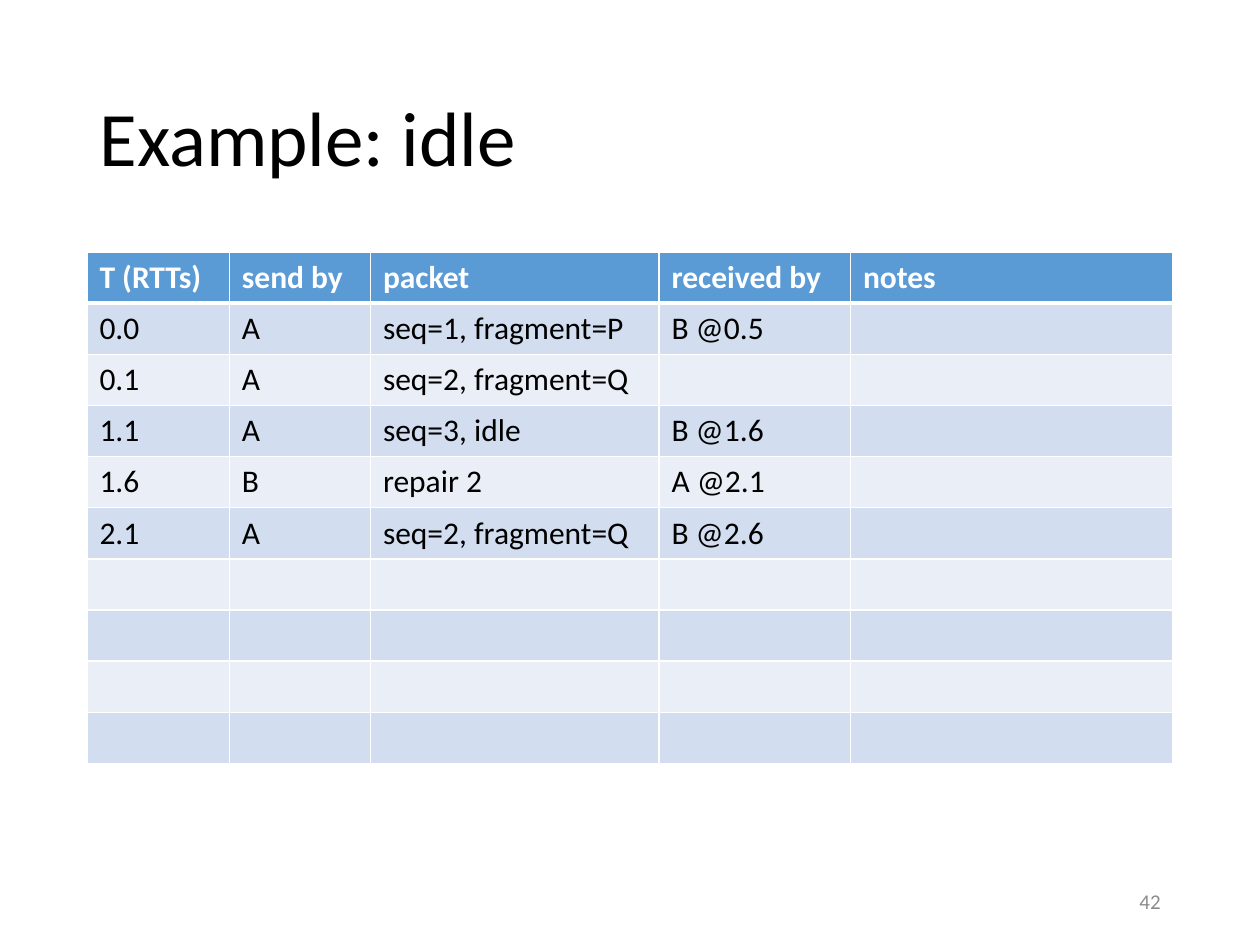
from lxml import etree
from pptx import Presentation
from pptx import util as u
from pptx.dml.color import RGBColor
from pptx.enum import text
from pptx.oxml.ns import qn

FONT = "Calibri"
LEFT, WIDTH = 0.69, 8.62
HEADER_FILL = "5B9BD5"
BAND_FILLS = ("D2DEEF", "EAEFF7")
COLUMN_WIDTHS = (1.13, 1.12, 2.29, 1.52, 2.56)
HEADINGS = ("T (RTTs)", "send by", "packet", "received by", "notes")
EVENTS = (
    ("0.0", "A", "seq=1, fragment=P", "B @0.5"),
    ("0.1", "A", "seq=2, fragment=Q", ""),
    ("1.1", "A", "seq=3, idle", "B @1.6"),
    ("1.6", "B", "repair 2", "A @2.1"),
    ("2.1", "A", "seq=2, fragment=Q", "B @2.6"),
)
ROW_COUNT = 10


def color(value):
    return RGBColor.from_string(value)


def write_text(frame, content, size=18, ink="000000", bold=False,
               align=text.PP_ALIGN.LEFT, anchor=None, spacing=None):
    frame.word_wrap = True
    if anchor is not None:
        frame.vertical_anchor = anchor
    paragraph = frame.paragraphs[0]
    paragraph.alignment = align
    if spacing:
        paragraph.line_spacing = spacing
    run = paragraph.add_run()
    run.text = content
    run.font.name = FONT
    run.font.size = u.Pt(size)
    run.font.bold = bold
    run.font.color.rgb = color(ink)


def place(shape, left, top, width, height):
    shape.left, shape.top = u.Inches(left), u.Inches(top)
    shape.width, shape.height = u.Inches(width), u.Inches(height)


def set_borders(cell, top=1, bottom=1):
    """Draw white cell borders, widths in points."""
    properties = cell._tc.get_or_add_tcPr()
    for side, width in (("L", 1), ("R", 1), ("T", top), ("B", bottom)):
        line = etree.SubElement(properties, qn(f"a:ln{side}"), w=str(u.Pt(width)))
        fill = etree.SubElement(line, qn("a:solidFill"))
        etree.SubElement(fill, qn("a:srgbClr"), val="FFFFFF")


def add_title(slide, content):
    title = slide.shapes.title
    place(title, LEFT, 0.4, WIDTH, 1.45)
    write_text(title.text_frame, content, size=44, spacing=0.9,
               anchor=text.MSO_ANCHOR.MIDDLE)


def add_event_table(slide):
    table = slide.shapes.add_table(
        ROW_COUNT, len(HEADINGS), u.Inches(LEFT), u.Inches(2),
        u.Inches(WIDTH), u.Inches(4.06)).table
    for column, width in zip(table.columns, COLUMN_WIDTHS):
        column.width = u.Inches(width)

    # Fills and borders: header, then alternating bands
    for row_index, row in enumerate(table.rows):
        for cell in row.cells:
            set_borders(cell, top=3 if row_index == 1 else 1,
                        bottom=3 if row_index == 0 else 1)
            cell.fill.solid()
            fill = BAND_FILLS[(row_index - 1) % 2] if row_index else HEADER_FILL
            cell.fill.fore_color.rgb = color(fill)

    # Wording
    for row_index, values in enumerate((HEADINGS, *EVENTS)):
        is_header = row_index == 0
        for column_index, value in enumerate(values):
            if value:
                write_text(table.cell(row_index, column_index).text_frame, value,
                           ink="FFFFFF" if is_header else "000000", bold=is_header)


def add_slide_number(slide, number):
    box = slide.shapes.add_textbox(0, 0, 0, 0)
    place(box, 7.06, 6.95, 2.25, 0.4)
    write_text(box.text_frame, number, size=12, ink="8C8C8C",
               align=text.PP_ALIGN.RIGHT, anchor=text.MSO_ANCHOR.MIDDLE)


def main():
    presentation = Presentation()
    presentation.slide_width = u.Inches(10)
    presentation.slide_height = u.Inches(7.5)
    slide = presentation.slides.add_slide(presentation.slide_layouts[5])
    add_title(slide, "Example: idle")
    add_event_table(slide)
    add_slide_number(slide, "42")
    presentation.save("out.pptx")


if __name__ == "__main__":
    main()
